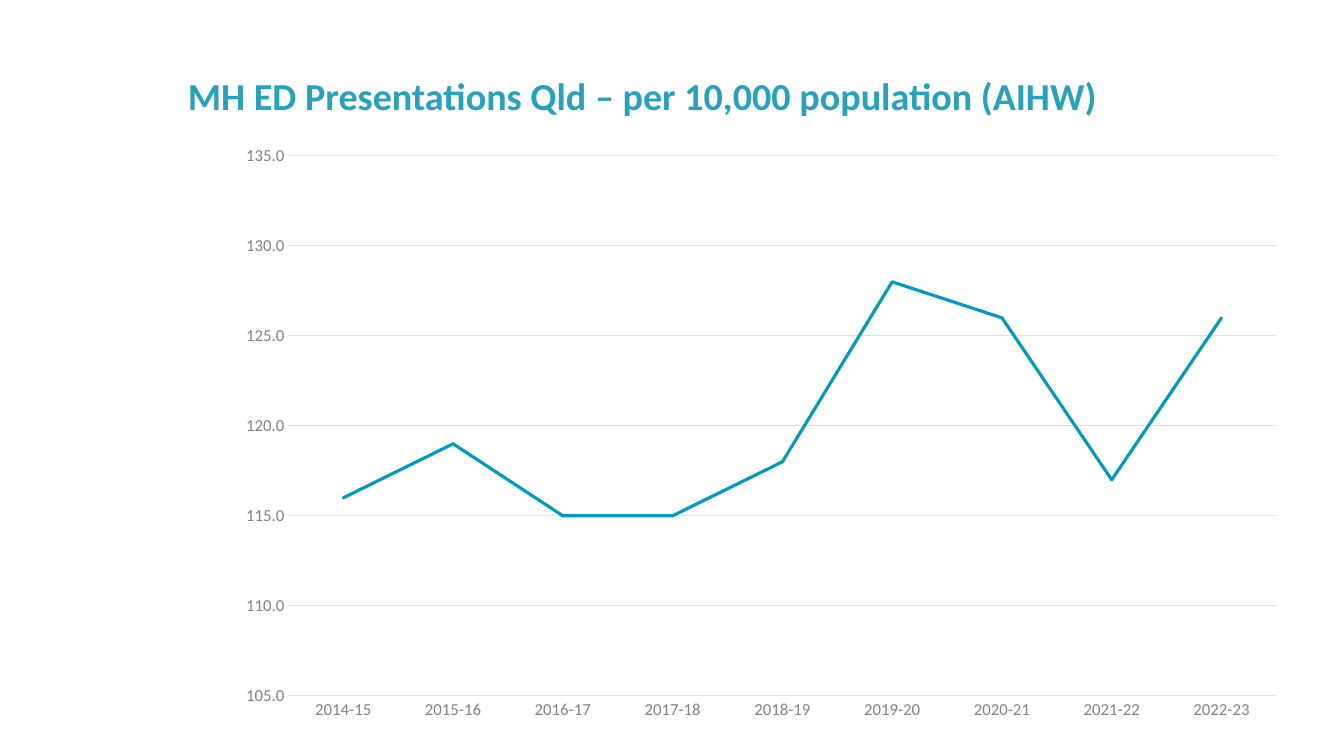
from lxml import etree
from pptx import Presentation
from pptx.chart.data import CategoryChartData
from pptx.dml.color import RGBColor
from pptx.enum.chart import XL_CHART_TYPE as ChartType, XL_MARKER_STYLE as Marker, XL_TICK_MARK as Tick
from pptx.enum.text import MSO_ANCHOR as Anchor, PP_ALIGN as Align
from pptx.oxml import parse_xml
from pptx.oxml.ns import nsdecls, qn
from pptx.util import Emu, Pt

COLORS = {
    "title": "28A1BD",
    "rate": "009ABC",
    "label": "848284",
    "text": "414041",
    "grid": "E3E2E3",
}


class SlideBuilder:
    font_name = "Calibri"
    scale = 914400 / 100.8

    def __init__(self, slide):
        self.slide = slide

    @classmethod
    def px(cls, length):
        return Emu(round(length * cls.scale))

    def box(self, *lengths):
        return [self.px(length) for length in lengths]

    def style_font(self, font, size, color, bold=False):
        font.name = self.font_name
        font.size = Pt(size)
        font.bold = bold
        font.color.rgb = RGBColor.from_string(COLORS[color])

    def style_line(self, line, color, width):
        line.color.rgb = RGBColor.from_string(COLORS[color])
        line.width = Pt(width)

    def title(self, wording, left, top, width, height):
        frame = self.slide.shapes.add_textbox(*self.box(left, top, width, height)).text_frame
        frame.word_wrap = True
        frame.vertical_anchor = Anchor.MIDDLE
        heading = frame.paragraphs[0]
        heading.alignment = Align.LEFT
        heading.line_spacing = 0.7
        run = heading.add_run()
        run.text = wording
        self.style_font(run.font, 27.2, "title", bold=True)

    def style_axis(self, axis):
        axis.major_tick_mark = axis.minor_tick_mark = Tick.NONE
        self.style_font(axis.tick_labels.font, 12, "label")

    def place_plot(self, chart, **fractions):
        layout = parse_xml(f"<c:layout {nsdecls('c')}/>")
        manual = etree.SubElement(layout, qn("c:manualLayout"))
        settings = {"layoutTarget": "inner", "xMode": "edge", "yMode": "edge", **fractions}
        for tag, value in settings.items():
            etree.SubElement(manual, qn(f"c:{tag}")).set("val", str(value))
        plot_area = chart._chartSpace.chart.plotArea
        for previous in plot_area.findall(qn("c:layout")):
            plot_area.remove(previous)
        plot_area.insert(0, layout)

    def line_chart(self, rates, left, top, width, height):
        data = CategoryChartData(number_format="0.0")
        data.categories = list(rates)
        data.add_series("Series 1", list(rates.values()))
        chart = self.slide.shapes.add_chart(
            ChartType.LINE, *self.box(left, top, width, height), data
        ).chart
        chart.has_title = False
        chart.has_legend = False
        self.style_font(chart.font, 10, "text")

        years = chart.category_axis
        self.style_axis(years)
        self.style_line(years.format.line, "grid", 0.75)

        scale = chart.value_axis
        self.style_axis(scale)
        scale.minimum_scale, scale.maximum_scale, scale.major_unit = 105, 135, 5
        scale.format.line.fill.background()
        scale.has_major_gridlines = True
        self.style_line(scale.major_gridlines.format.line, "grid", 0.75)
        scale.tick_labels.number_format = "0.0"
        scale.tick_labels.number_format_is_linked = False

        plot = chart.plots[0]
        plot.vary_by_categories = False
        trend = plot.series[0]
        trend.smooth = False
        trend.marker.style = Marker.NONE
        self.style_line(trend.format.line, "rate", 2.25)
        trend.format.line._get_or_add_ln().set("cap", "rnd")
        self.place_plot(chart, x=0.06, y=0.035, w=0.92, h=0.903)


def main():
    deck = Presentation()
    deck.slide_width = SlideBuilder.px(1344)
    deck.slide_height = SlideBuilder.px(756)
    builder = SlideBuilder(deck.slides.add_slide(deck.slide_layouts[6]))

    builder.title("MH ED Presentations Qld – per 10,000 population (AIHW)", 178, 62, 1092, 77)

    presentations = [116, 119, 115, 115, 118, 128, 126, 117, 126]
    rates = {
        f"{year}-{(year + 1) % 100}": rate
        for year, rate in enumerate(presentations, start=2014)
    }
    builder.line_chart(rates, 224, 135, 1074, 598)
    deck.save("out.pptx")


if __name__ == "__main__":
    main()
